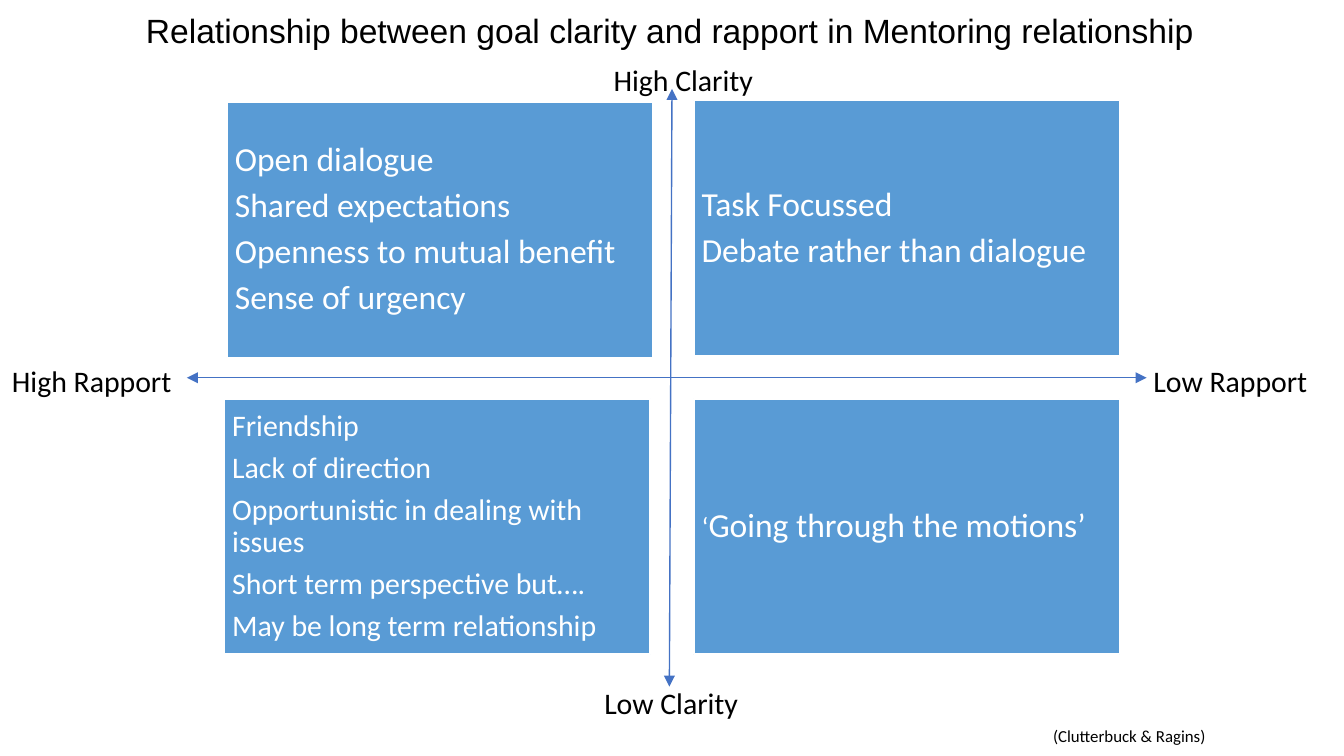
from dataclasses import dataclass

from lxml import etree
from pptx import Presentation
from pptx import util as u
from pptx.dml.color import RGBColor
from pptx.enum import shapes, text
from pptx.oxml.ns import qn


@dataclass(frozen=True)
class Theme:
    panel: RGBColor = RGBColor(0x59, 0x9B, 0xD5)
    axis: RGBColor = RGBColor(0x44, 0x72, 0xC4)
    ink: RGBColor = RGBColor(0, 0, 0)
    paper: RGBColor = RGBColor(255, 255, 255)
    title_font: str = "Arial"
    body_font: str = "Calibri"
    title_size: float = 18
    panel_size: float = 18
    dense_size: float = 16
    quote_size: float = 15
    label_size: float = 16
    credit_size: float = 9


THEME = Theme()
PANEL_W, PANEL_H = 8.05, 4.83
LABEL_W, LABEL_H = 4.85, 0.86
TEXT_INSETS = (0.18, 0.1)
PANEL_INSETS = (0.15, 0.15)

# Left, top and paragraphs of each quadrant; a paragraph is a list of (text, size)
QUADRANTS = [
    (4.29, 1.93, [[(line, THEME.panel_size)] for line in (
        "Open dialogue", "Shared expectations",
        "Openness to mutual benefit", "Sense of urgency")]),
    (13.11, 1.9, [[(line, THEME.panel_size)] for line in (
        "Task Focussed", "Debate rather than dialogue")]),
    (4.24, 7.54, [[(line, THEME.dense_size)] for line in (
        "Friendship", "Lack of direction",
        "Opportunistic in dealing with issues",
        "Short term perspective but….", "May be long term relationship")]),
    (13.11, 7.54, [[("‘", THEME.quote_size),
                    ("Going through the motions’", THEME.panel_size)]]),
]
AXES = [(12.7, 1.68, 12.65, 12.98), (3.53, 7.14, 21.67, 7.14)]
AXIS_LABELS = [
    ("High Clarity", 10.49, 1.07),
    ("Low Clarity", 10.26, 12.85),
    ("High Rapport", -0.69, 6.76),
    ("Low Rapport", 20.83, 6.76),
]


def cm(box):
    return [u.Cm(v) for v in box]


def set_frame(tf, insets, anchor):
    tf.word_wrap = True
    tf.auto_size = text.MSO_AUTO_SIZE.NONE
    tf.vertical_anchor = anchor
    tf.margin_left = tf.margin_right = u.Cm(insets[0])
    tf.margin_top = tf.margin_bottom = u.Cm(insets[1])


def add_run(p, words, size, color, font=THEME.body_font):
    r = p.add_run()
    r.text = words
    r.font.name = font
    r.font.size = u.Pt(size)
    r.font.color.rgb = color


def place_title(slide, box, words):
    sp = slide.shapes.title
    sp.left, sp.top, sp.width, sp.height = cm(box)
    set_frame(sp.text_frame, TEXT_INSETS, text.MSO_ANCHOR.TOP)
    p = sp.text_frame.paragraphs[0]
    p.alignment = text.PP_ALIGN.CENTER
    add_run(p, words, THEME.title_size, THEME.ink, THEME.title_font)


def add_quadrant(slide, box, paragraphs):
    sp = slide.shapes.add_shape(shapes.MSO_SHAPE.RECTANGLE, *cm(box))
    sp.shadow.inherit = False
    sp.fill.solid()
    sp.fill.fore_color.rgb = THEME.panel
    sp.line.color.rgb = THEME.paper
    sp.line.width = u.Pt(1)
    tf = sp.text_frame
    set_frame(tf, PANEL_INSETS, text.MSO_ANCHOR.MIDDLE)
    for i, runs in enumerate(paragraphs):
        p = tf.add_paragraph() if i else tf.paragraphs[0]
        p.alignment = text.PP_ALIGN.LEFT
        p.line_spacing = 0.9
        if i:
            p.space_before = u.Pt(5.2)
        for words, size in runs:
            add_run(p, words, size, THEME.paper)


def add_axis(slide, ends):
    """Draw a line with an arrowhead at both ends."""
    axis = slide.shapes.add_connector(shapes.MSO_CONNECTOR.STRAIGHT, *cm(ends))
    axis.line.color.rgb = THEME.axis
    axis.line.width = u.Pt(0.75)
    ln = axis.line._get_or_add_ln()
    for end in ("a:headEnd", "a:tailEnd"):
        etree.SubElement(ln, qn(end), type="triangle")
    etree.SubElement(axis._element.spPr, qn("a:effectLst"))


def add_label(slide, box, words, size, align):
    tf = slide.shapes.add_textbox(*cm(box)).text_frame
    set_frame(tf, TEXT_INSETS, text.MSO_ANCHOR.TOP)
    p = tf.paragraphs[0]
    p.alignment = align
    add_run(p, words, size, THEME.ink)


def build_slide(prs):
    slide = prs.slides.add_slide(prs.slide_layouts[5])
    place_title(slide, (0.71, 0.08, 23.9, 0.97),
                "Relationship between goal clarity and rapport in Mentoring relationship")
    for left, top, paragraphs in QUADRANTS:
        add_quadrant(slide, (left, top, PANEL_W, PANEL_H), paragraphs)
    for ends in AXES:
        add_axis(slide, ends)
    for words, left, top in AXIS_LABELS:
        add_label(slide, (left, top, LABEL_W, LABEL_H), words,
                  THEME.label_size, text.PP_ALIGN.CENTER)
    add_label(slide, (3.2, 13.61, 19.76, 0.58), "(Clutterbuck & Ragins)",
              THEME.credit_size, text.PP_ALIGN.RIGHT)


def main():
    prs = Presentation()
    prs.slide_width, prs.slide_height = u.Cm(25.4), u.Cm(14.29)
    build_slide(prs)
    prs.save("out.pptx")


if __name__ == "__main__":
    main()
